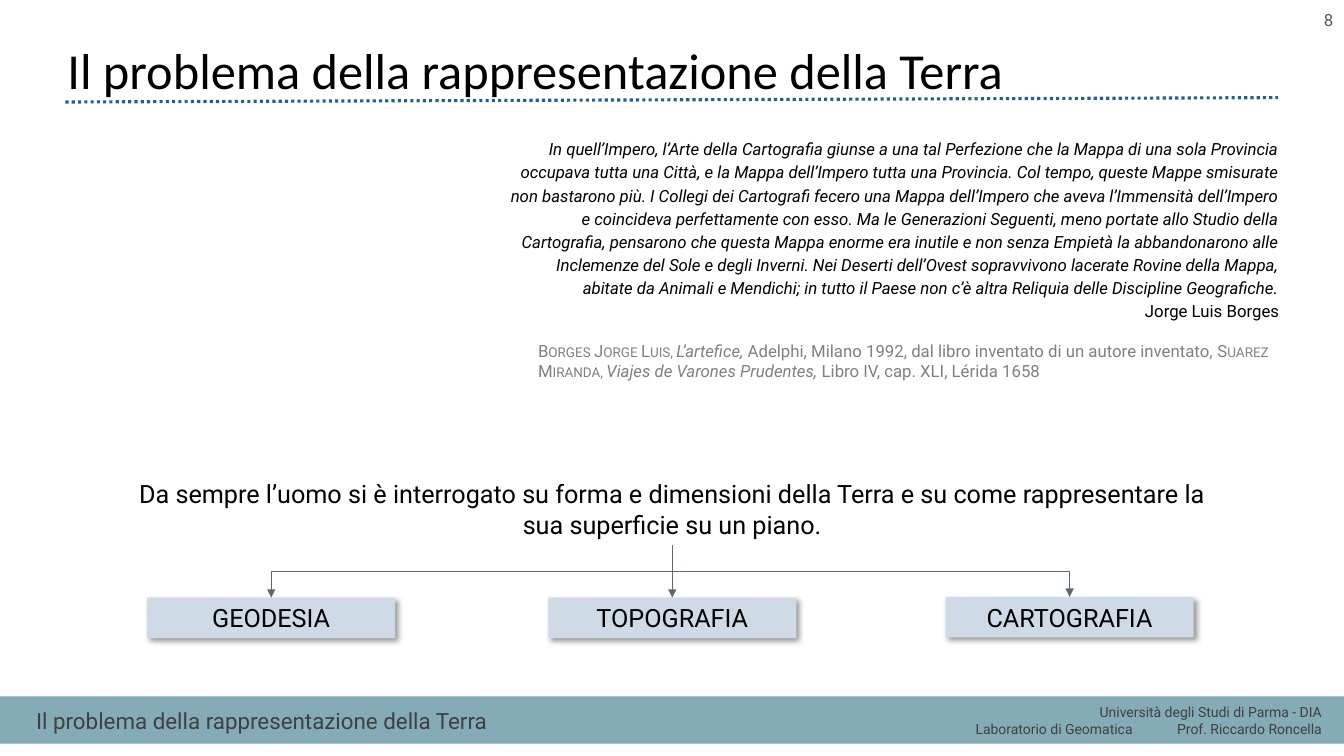
from lxml import etree
from pptx import Presentation
from pptx.dml.color import RGBColor
from pptx.enum.dml import MSO_LINE
from pptx.enum.shapes import MSO_CONNECTOR, MSO_SHAPE
from pptx.enum.text import MSO_ANCHOR, PP_ALIGN
from pptx.oxml.ns import qn
from pptx.util import Cm, Pt

RECT = MSO_SHAPE.RECTANGLE
STRAIGHT, ELBOW = MSO_CONNECTOR.STRAIGHT, MSO_CONNECTOR.ELBOW
DOTTED = MSO_LINE.ROUND_DOT
TOP, MIDDLE = MSO_ANCHOR.TOP, MSO_ANCHOR.MIDDLE
LEFT, CENTER, RIGHT = PP_ALIGN.LEFT, PP_ALIGN.CENTER, PP_ALIGN.RIGHT
BOTTOM_SITE, TOP_SITE = 2, 0

COLORS = {
    "band": "84ACB6", "rule": "1D6294", "box": "CEDBE6", "arrow": "5B696B",
    "text": "000000", "footer": "404040", "source": "808080", "number": "595959",
}
TITLE = "Il problema della rappresentazione della Terra"
CREDITS = ["Università degli Studi di Parma - DIA",
           "Laboratorio di Geomatica\tProf. Riccardo Roncella"]
QUOTE = (
    "In quell’Impero, l’Arte della Cartografia giunse a una tal Perfezione che la Mappa "
    "di una sola Provincia occupava tutta una Città, e la Mappa dell’Impero tutta una "
    "Provincia. Col tempo, queste Mappe smisurate non bastarono più. I Collegi dei "
    "Cartografi fecero una Mappa dell’Impero che aveva l’Immensità dell’Impero e "
    "coincideva perfettamente con esso. Ma le Generazioni Seguenti, meno portate allo "
    "Studio della Cartografia, pensarono che questa Mappa enorme era inutile e non senza "
    "Empietà la abbandonarono alle Inclemenze del Sole e degli Inverni. Nei Deserti "
    "dell’Ovest sopravvivono lacerate Rovine della Mappa, abitate da Animali e Mendichi; "
    "in tutto il Paese non c’è altra Reliquia delle Discipline Geografiche."
)
AUTHOR = "Jorge Luis Borges"
SOURCE = [
    ("Borges Jorge Luis, ", "small"),
    ("L’artefice, ", "italic"),
    ("Adelphi, Milano 1992, dal libro inventato di un autore inventato, ", ""),
    ("Suarez Miranda, ", "small"),
    ("Viajes de Varones Prudentes, ", "italic"),
    ("Libro IV, cap. XLI, Lérida 1658", ""),
]
QUESTION = ("Da sempre l’uomo si è interrogato su forma e dimensioni della Terra "
            "e su come rappresentare la sua superficie su un piano.")
FIELDS = [("GEODESIA", 3.71, 15.06), ("TOPOGRAFIA", 13.82, 15.06),
          ("CARTOGRAFIA", 23.83, 15.04)]
FIELD_SIZE = (6.25, 1.02)


def rgb(name):
    return RGBColor.from_string(COLORS[name])


def add_paragraph(tf, runs, size, color="text", align=LEFT, font="Roboto",
                  spacing=None, indent=0, before=None):
    p = tf.paragraphs[0]
    if p.runs:
        p = tf.add_paragraph()
    p.alignment = align
    if spacing:
        p.line_spacing = spacing
    if before:
        p.space_before = Pt(before)
    if indent:
        p._p.get_or_add_pPr().set("marL", str(Cm(indent)))
    for text, style in runs:
        r = p.add_run()
        r.text = text
        r.font.name, r.font.size = font, Pt(size)
        r.font.italic = style == "italic"
        r.font.color.rgb = rgb(color)
        if style == "small":
            r._r.get_or_add_rPr().set("cap", "small")


def add_box(s, area, anchor=TOP):
    sp = s.shapes.add_textbox(*map(Cm, area))
    sp.text_frame.word_wrap = True
    sp.text_frame.vertical_anchor = anchor
    return sp


def add_rect(s, area, color):
    sp = s.shapes.add_shape(RECT, *map(Cm, area))
    sp.fill.solid()
    sp.fill.fore_color.rgb = rgb(color)
    sp.line.fill.background()
    sp.shadow.inherit = False
    return sp


def add_line(s, kind, ends, color, width):
    line = s.shapes.add_connector(kind, *map(Cm, ends))
    line.line.color.rgb = rgb(color)
    line.line.width = Pt(width)
    etree.SubElement(line._element.spPr, qn("a:effectLst"))
    return line


def add_field(s, label, left, top):
    sp = add_rect(s, (left, top, *FIELD_SIZE), "box")
    effects = sp._element.spPr.find(qn("a:effectLst"))
    shadow = etree.SubElement(effects, qn("a:outerShdw"), blurRad=str(Pt(4)),
                              dist=str(Pt(3)), dir=str(45 * 60000),
                              algn="tl", rotWithShape="0")
    black = etree.SubElement(shadow, qn("a:srgbClr"), val=COLORS["text"])
    etree.SubElement(black, qn("a:alpha"), val="40000")
    sp.text_frame.vertical_anchor = MIDDLE
    add_paragraph(sp.text_frame, [(label, "")], 18, align=CENTER)
    return sp


def add_branch(s, start, end):
    line = add_line(s, ELBOW, (0, 0, 1, 1), "arrow", 0.5)
    line.begin_connect(start, BOTTOM_SITE)
    line.end_connect(end, TOP_SITE)
    x1, y1, x2, y2 = line.begin_x, line.begin_y, line.end_x, line.end_y
    across, down = abs(x2 - x1), y2 - y1
    line.left, line.top = (x1 + x2 - down) // 2, (y1 + y2 - across) // 2
    line.width, line.height = down, across
    xfrm = line._element.spPr.find(qn("a:xfrm"))
    for flip in ("flipH", "flipV"):
        xfrm.attrib.pop(flip, None)
    to_right = x2 > x1 + Cm(0.1)
    xfrm.set("rot", str((270 if to_right else 90) * 60000))
    if to_right:
        xfrm.set("flipH", "1")
    ln = line._element.spPr.find(qn("a:ln"))
    etree.SubElement(ln, qn("a:tailEnd"), type="triangle")


def main():
    """Build the slide on representing the Earth."""
    prs = Presentation()
    prs.slide_width, prs.slide_height = Cm(33.87), Cm(19.05)
    s = prs.slides.add_slide(prs.slide_layouts[6])

    add_rect(s, (0, 17.55, 33.87, 1.19), "band")
    rule = add_line(s, STRAIGHT, (1.65, 2.57, 32.21, 2.46), "rule", 2.25)
    rule.line.dash_style = DOTTED

    credits = add_box(s, (23.5, 17.6, 10.06, 1.12)).text_frame
    for text in CREDITS:
        add_paragraph(credits, [(text, "")], 10, "footer", RIGHT)

    title = add_box(s, (1.45, 0, 31.01, 3.68), MIDDLE).text_frame
    add_paragraph(title, [(TITLE, "")], 36, font="Calibri", spacing=0.9)
    footer = add_box(s, (0.66, 17.65, 18.47, 1.02), MIDDLE).text_frame
    add_paragraph(footer, [(TITLE, "")], 16, "footer")
    number = add_box(s, (32, 0, 1.85, 1.02), MIDDLE).text_frame
    add_paragraph(number, [("8", "")], 12, "number", RIGHT)

    quote = add_box(s, (7.32, 3.3, 25.17, 6.5)).text_frame
    for text, style in ((QUOTE, "italic"), (AUTHOR, "")):
        add_paragraph(quote, [(text, style)], 12, align=RIGHT, spacing=1.15, indent=5.26)
    add_paragraph(quote, SOURCE, 12, "source", indent=5.99, before=14)

    question = add_box(s, (3.2, 11.94, 27.48, 1.8))
    add_paragraph(question.text_frame, [(QUESTION, "")], 18, align=CENTER)
    for label, left, top in FIELDS:
        add_branch(s, question, add_field(s, label, left, top))

    prs.save("out.pptx")


if __name__ == "__main__":
    main()
